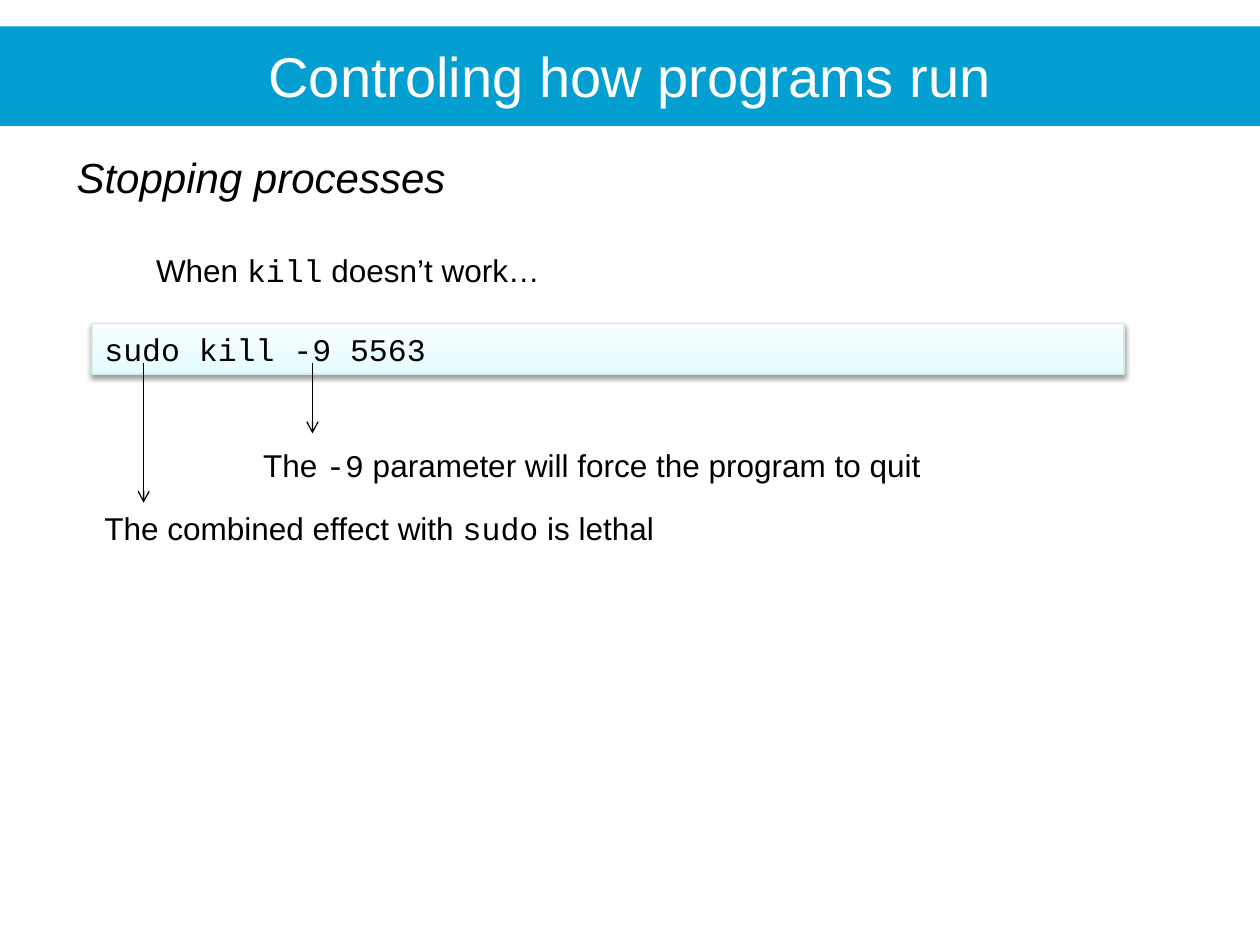
import pptx
import pptx.dml.color
import pptx.enum.shapes
import pptx.enum.text
import pptx.oxml
import pptx.oxml.ns
import pptx.util
from lxml import etree

RGBColor = pptx.dml.color.RGBColor
BLACK = RGBColor(0x00, 0x00, 0x00)
WHITE = RGBColor(0xFF, 0xFF, 0xFF)
BAND_BLUE = RGBColor(0x03, 0x9F, 0xD0)
CODE_BORDER = RGBColor(0xD5, 0xE8, 0xEA)
CODE_GRADIENT = (
    (0, RGBColor(0xE6, 0xFD, 0xFF)),
    (35, RGBColor(0xEC, 0xFD, 0xFF)),
    (100, RGBColor(0xF8, 0xFE, 0xFF)),
)
SANS = "Arial"
MONO = "Courier New"
COLUMNS, ROWS = 100, 75
LINE_ROWS = 4  # height of one line of 18 point text
CODE_LEFT = 7.3


def qualified(name):
    return pptx.oxml.ns.qn(name)


def add_run(paragraph, text, *, font=SANS, size=18, color=BLACK, italic=None):
    run = paragraph.add_run()
    run.text = text
    run.font.name = font
    run.font.size = pptx.util.Pt(size)
    run.font.color.rgb = color
    run.font.italic = italic


class SlideBuilder:
    """Draws on one slide, with lengths in columns and rows."""

    def __init__(self, presentation):
        self.column = presentation.slide_width / COLUMNS
        self.row = presentation.slide_height / ROWS
        self.slide = presentation.slides.add_slide(presentation.slide_layouts[5])
        self.shapes = self.slide.shapes

    def place(self, left, top, width, height):
        return (round(left * self.column), round(top * self.row),
                round(width * self.column), round(height * self.row))

    def fill_text(self, shape, *pieces, **style):
        """Write one line; pieces at odd positions are code."""
        frame = shape.text_frame
        frame.word_wrap = True
        frame.auto_size = pptx.enum.text.MSO_AUTO_SIZE.SHAPE_TO_FIT_TEXT
        paragraph = frame.paragraphs[0]
        for index, piece in enumerate(pieces):
            add_run(paragraph, piece, **{"font": MONO if index % 2 else SANS, **style})
        return paragraph

    def rectangle(self, *box):
        shape = self.shapes.add_shape(
            pptx.enum.shapes.MSO_SHAPE.RECTANGLE, *self.place(*box))
        shape.shadow.inherit = False
        return shape

    def title(self, text, box, band_box):
        title = self.shapes.title
        title.left, title.top, title.width, title.height = self.place(*box)
        paragraph = self.fill_text(title, text, size=32, color=WHITE)
        paragraph.alignment = pptx.enum.text.PP_ALIGN.CENTER
        band = self.rectangle(*band_box)
        band.fill.solid()
        band.fill.fore_color.rgb = BAND_BLUE
        band.line.fill.background()
        title.element.addprevious(band.element)  # band lies behind the title

    def text(self, left, top, width, height, *pieces, **style):
        box = self.shapes.add_textbox(*self.place(left, top, width, height))
        self.fill_text(box, *pieces, **style)

    def code(self, left, top, width, height, text):
        shape = self.rectangle(left, top, width, height)
        shape.fill.gradient()
        shape.fill.gradient_angle = 90
        properties = shape.element.spPr
        stops = properties.find(".//" + qualified("a:gsLst"))
        for stop in list(stops):
            stops.remove(stop)
        for percent, color in CODE_GRADIENT:
            stop = etree.SubElement(stops, qualified("a:gs"), pos=str(percent * 1000))
            etree.SubElement(stop, qualified("a:srgbClr"), val=str(color))
        shape.line.color.rgb = CODE_BORDER
        shape.line.width = pptx.util.Pt(0.75)
        shadow = etree.SubElement(
            properties.find(qualified("a:effectLst")), qualified("a:outerShdw"),
            blurRad=str(pptx.util.Pt(3.1)), dist=str(pptx.util.Pt(1.6)),
            dir="5400000", rotWithShape="0")
        color = etree.SubElement(shadow, qualified("a:srgbClr"), val=str(BLACK))
        etree.SubElement(color, qualified("a:alpha"), val="38000")
        paragraph = self.fill_text(shape, text, font=MONO)
        paragraph.alignment = pptx.enum.text.PP_ALIGN.LEFT

    def down_arrow(self, column, top, bottom):
        arrow = self.shapes.add_connector(
            pptx.enum.shapes.MSO_CONNECTOR.STRAIGHT,
            *self.place(column, top, column, bottom))
        arrow.line.color.rgb = BLACK
        arrow.line.width = pptx.util.Pt(0.75)
        properties = arrow.element.spPr
        etree.SubElement(properties.find(qualified("a:ln")),
                         qualified("a:tailEnd"), type="arrow")
        etree.SubElement(properties, qualified("a:effectLst"))


def main():
    presentation = pptx.Presentation()
    presentation.slide_width = pptx.util.Inches(10)
    presentation.slide_height = pptx.util.Inches(7.5)

    builder = SlideBuilder(presentation)
    builder.title("Controling how programs run",
                  box=(0, 2.8, COLUMNS, 6.4), band_box=(0, 2.1, COLUMNS, 7.9))
    builder.text(5.1, 11.5, 86.6, 5, "Stopping processes", size=24, italic=True)
    builder.text(11.4, 19.4, 58.3, LINE_ROWS, "When ", "kill", " doesn’t work…")
    builder.code(CODE_LEFT, 25.7, 81.9, LINE_ROWS, "sudo kill -9 5563")
    builder.down_arrow(24.8, 28.8, 34.4)
    builder.text(19.9, 34.9, 73.2, LINE_ROWS,
                 "The ", "-9", " parameter will force the program to quit")
    builder.down_arrow(11.4, 28.8, 39.9)
    builder.text(CODE_LEFT, 39.9, 53.8, LINE_ROWS,
                 "The combined effect with ", "sudo", " is lethal")
    presentation.save("out.pptx")


if __name__ == "__main__":
    main()
